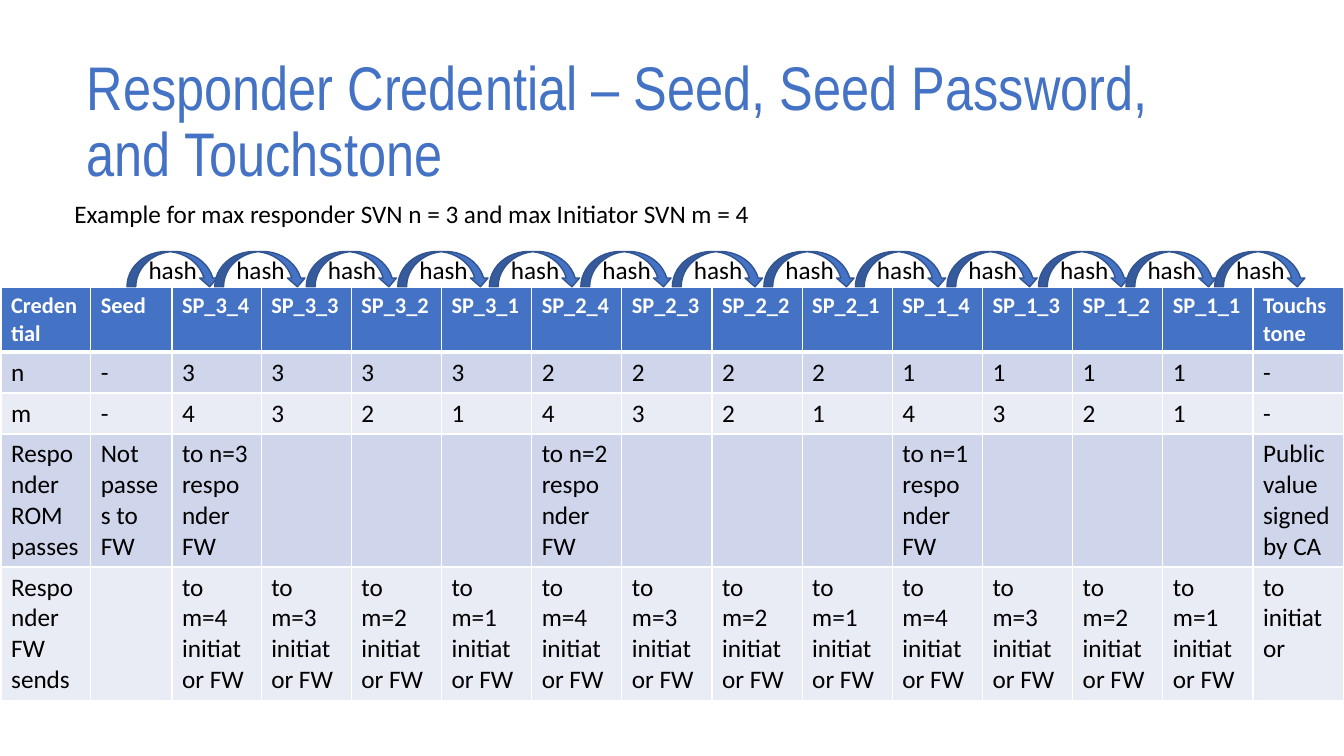
"""Build the slide on the responder credential hash chain."""
from dataclasses import dataclass

from lxml.etree import SubElement
from pptx import Presentation
from pptx.dml.color import RGBColor
from pptx.enum.shapes import MSO_SHAPE
from pptx.enum.text import MSO_ANCHOR, MSO_AUTO_SIZE, PP_ALIGN
from pptx.oxml.ns import qn
from pptx.slide import Slide
from pptx.table import _Cell
from pptx.text.text import TextFrame
from pptx.util import Inches, Length, Pt

COLOURS = {
    "accent": "4472C4",
    "outline": "325491",
    "band": "CFD5EA",
    "light": "E9EBF5",
    "white": "FFFFFF",
    "black": "000000",
}
SLIDE_WIDTH, SLIDE_HEIGHT = Inches(13.333), Inches(7.5)
COLUMN_SHARES = [6.67, 6.05, 6.64] + [6.71] * 12
ROW_SHARE = 5.4
ARROW_STEP = 6.81
ARROW_LEFTS = [9.45] + [15.98 + ARROW_STEP * i for i in range(10)] + [83.78, 90.38]
STEPS = [(n, m) for n in (3, 2, 1) for m in (4, 3, 2, 1)]


@dataclass(frozen=True)
class Area:
    """Place and size in percent of the slide."""

    left: float
    top: float
    width: float
    height: float

    def lengths(self) -> tuple[Length, Length, Length, Length]:
        """Return left, top, width and height as lengths."""
        return across(self.left), down(self.top), across(self.width), down(self.height)


@dataclass(frozen=True)
class TextStyle:
    """Look of a run of text."""

    size: float
    colour: str = "black"
    font: str = "Calibri"
    bold: bool = False


@dataclass(frozen=True)
class CredentialRow:
    """One row of the credential table."""

    texts: list[str]
    fill: str
    style: TextStyle
    bottom_line: float = 1


TITLE = TextStyle(44, "accent", "Arial Narrow")
HEADER = TextStyle(16, "white", bold=True)
BODY = TextStyle(18)

ROWS = [
    CredentialRow(["Credential", "Seed", *(f"SP_{n}_{m}" for n, m in STEPS), "Touchstone"],
                  "accent", HEADER, 3),
    CredentialRow(["n", "-", *(str(n) for n, m in STEPS), "-"], "band", BODY),
    CredentialRow(["m", "-", *(str(m) for n, m in STEPS), "-"], "light", BODY),
    CredentialRow(["Responder ROM passes", "Not passes to FW",
                   *(f"to n={n} responder FW" if m == 4 else "" for n, m in STEPS),
                   "Public value signed by CA"], "band", BODY),
    CredentialRow(["Responder FW sends", "",
                   *(f"to m={m} initiator FW" for n, m in STEPS),
                   "to initiator"], "light", BODY),
]


def across(percent: float) -> Length:
    """Return a share of the slide width."""
    return Length(round(SLIDE_WIDTH * percent / 100))


def down(percent: float) -> Length:
    """Return a share of the slide height."""
    return Length(round(SLIDE_HEIGHT * percent / 100))


def colour(name: str) -> RGBColor:
    """Look up a named colour."""
    return RGBColor.from_string(COLOURS[name])


def write(frame: TextFrame, text: str, style: TextStyle) -> None:
    """Set the text of a frame and format its runs."""
    frame.text = text
    for para in frame.paragraphs:
        para.font.size = Pt(style.size)
        for span in para.runs:
            span.font.size = Pt(style.size)
            span.font.name = style.font
            span.font.bold = style.bold
            span.font.color.rgb = colour(style.colour)


def add_title(page: Slide, area: Area, text: str) -> None:
    """Move and fill the title placeholder."""
    title = page.shapes.title
    title.left, title.top, title.width, title.height = area.lengths()
    frame = title.text_frame
    write(frame, text, TITLE)
    frame.word_wrap = True
    frame.auto_size = MSO_AUTO_SIZE.NONE
    frame.vertical_anchor = MSO_ANCHOR.MIDDLE
    frame.paragraphs[0].alignment = PP_ALIGN.LEFT
    frame.paragraphs[0].line_spacing = 0.9


def add_caption(page: Slide, area: Area, text: str) -> None:
    """Add the line that explains the example."""
    box = page.shapes.add_textbox(*area.lengths())
    box.text_frame.word_wrap = True
    write(box.text_frame, text, BODY)


def add_borders(cell: _Cell, bottom_line: float) -> None:
    """Draw white lines around a cell."""
    properties = cell._tc.get_or_add_tcPr()
    for tag, width in (("a:lnL", 1), ("a:lnR", 1), ("a:lnT", 1), ("a:lnB", bottom_line)):
        line = SubElement(properties, qn(tag), w=str(Pt(width)))
        fill = SubElement(line, qn("a:solidFill"))
        SubElement(fill, qn("a:srgbClr"), val=COLOURS["white"])


def add_credentials(page: Slide, left: float, top: float) -> None:
    """Add the table of credentials."""
    area = Area(left, top, sum(COLUMN_SHARES), ROW_SHARE * len(ROWS))
    frame = page.shapes.add_table(len(ROWS), len(COLUMN_SHARES), *area.lengths())
    table = frame.table
    for column, share in zip(table.columns, COLUMN_SHARES):
        column.width = across(share)
    for index, row in enumerate(ROWS):
        table.rows[index].height = down(ROW_SHARE)
        top_line = ROWS[index - 1].bottom_line if index else 1
        for cell, text in zip(table.rows[index].cells, row.texts):
            add_borders(cell, row.bottom_line)
            cell._tc.tcPr.find(qn("a:lnT")).set("w", str(Pt(top_line)))
            cell.fill.solid()
            cell.fill.fore_color.rgb = colour(row.fill)
            write(cell.text_frame, text, row.style)


def add_hash_arrow(page: Slide, area: Area) -> None:
    """Add one curved arrow for a hash step."""
    arrow = page.shapes.add_shape(MSO_SHAPE.CURVED_DOWN_ARROW, *area.lengths())
    arrow.shadow.inherit = False
    arrow.fill.solid()
    arrow.fill.fore_color.rgb = colour("accent")
    arrow.line.color.rgb = colour("outline")
    arrow.line.width = Pt(1)
    write(arrow.text_frame, "hash", BODY)
    arrow.text_frame.vertical_anchor = MSO_ANCHOR.MIDDLE
    arrow.text_frame.paragraphs[0].alignment = PP_ALIGN.CENTER


def main() -> None:
    """Build and save the deck."""
    deck = Presentation()
    deck.slide_width, deck.slide_height = SLIDE_WIDTH, SLIDE_HEIGHT
    page = deck.slides.add_slide(deck.slide_layouts[5])
    add_title(page, Area(5.7, 6.67, 86.25, 19.33),
              "Responder Credential – Seed, Seed Password, and Touchstone")
    add_credentials(page, 0.08, 38)
    for left in ARROW_LEFTS:
        add_hash_arrow(page, Area(left, 33.27, ARROW_STEP, 4.67))
    add_caption(page, Area(4.8, 25.6, 67.73, 5.33),
                "Example for max responder SVN n = 3 and max Initiator SVN m = 4")
    deck.save("out.pptx")


if __name__ == "__main__":
    main()
